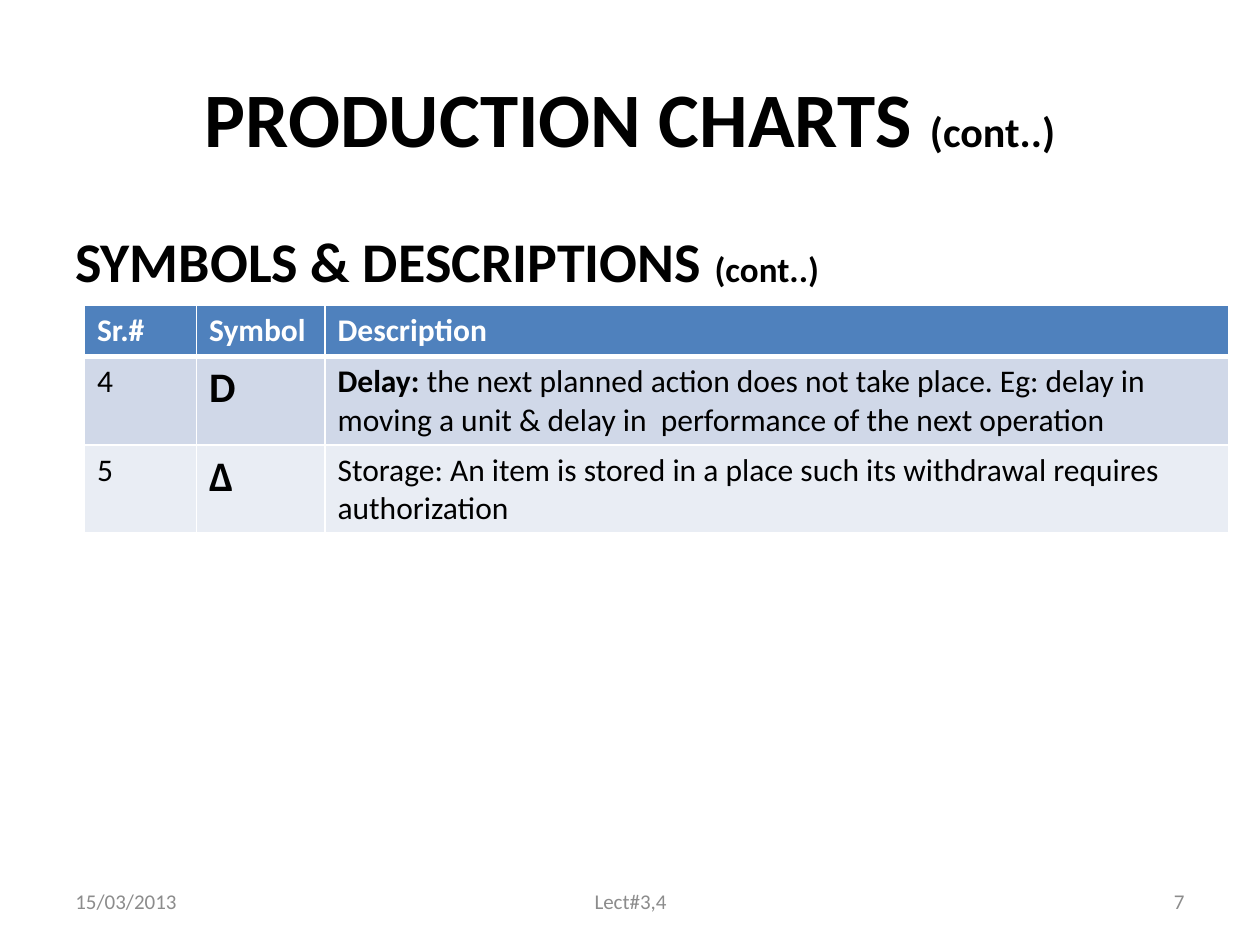
import pptx
import pptx.util
import pptx.dml.color
import pptx.enum.text
from lxml import etree

Inches, Pt = pptx.util.Inches, pptx.util.Pt
ALIGN, ANCHOR = pptx.enum.text.PP_ALIGN, pptx.enum.text.MSO_ANCHOR
A = "http://schemas.openxmlformats.org/drawingml/2006/main"

# Content: each run is (text, size, bold)
WIDTH, HEIGHT, MARGIN = 10, 7.5, 0.5
BLACK, GREY, WHITE = "000000", "8C8C8C", "FFFFFF"
TITLE = [("PRODUCTION CHARTS ", 44, True), ("(cont..)", 24, True)]
SUBTITLE = [("SYMBOLS & DESCRIPTIONS ", 32, True), ("(cont..)", 20, True)]
FOOTERS = [
    ("15/03/2013", MARGIN, 2.33, ALIGN.LEFT),
    ("Lect#3,4", 3.42, 3.17, ALIGN.CENTER),
    ("7", 7.17, 2.33, ALIGN.RIGHT),
]
COLUMNS = [0.89, 1.02, 7.17]
ROW_HEIGHTS = [0.41, 0.7, 0.7]
ROW_FILLS = ["4F81BD", "D0D8E8", "E9EDF4"]
ROWS = [
    [[("Sr.#", 18, True)], [("Symbol", 18, True)], [("Description", 18, True)]],
    [[("4", 18, False)], [("D", 24, True)],
     [("Delay:", 18, True),
      (" the next planned action does not take place. Eg: delay in moving a unit"
       " & delay in  performance of the next operation", 18, False)]],
    [[("5", 18, False)], [("∆", 24, True)],
     [("Storage: An item is stored in a place such its withdrawal requires"
       " authorization", 18, False)]],
]


def rgb(color):
    return pptx.dml.color.RGBColor.from_string(color)


def add_runs(p, runs, color):
    for text, size, bold in runs:
        r = p.add_run()
        r.text = text
        r.font.name, r.font.size, r.font.bold = "Calibri", Pt(size), bold
        r.font.color.rgb = rgb(color)


def add_text(s, box, runs, color=BLACK, align=ALIGN.LEFT, anchor=ANCHOR.MIDDLE):
    sp = s.shapes.add_textbox(*map(Inches, box))
    tf = sp.text_frame
    tf.word_wrap, tf.vertical_anchor = True, anchor
    p = tf.paragraphs[0]
    p.alignment = align
    add_runs(p, runs, color)


def set_borders(cell, widths):
    """Draw white borders; the lines must come before the cell's fill."""
    tc_pr = cell._tc.get_or_add_tcPr()
    for i, (side, width) in enumerate(widths.items()):
        ln = etree.Element(f"{{{A}}}ln{side}", w=str(Pt(width)))
        fill = etree.SubElement(ln, f"{{{A}}}solidFill")
        etree.SubElement(fill, f"{{{A}}}srgbClr", val=WHITE)
        tc_pr.insert(i, ln)


prs = pptx.Presentation()
prs.slide_width, prs.slide_height = Inches(WIDTH), Inches(HEIGHT)
s = prs.slides.add_slide(prs.slide_layouts[6])

# Headings
full = WIDTH - 2 * MARGIN
add_text(s, (MARGIN, 0.3, full, 1.25), TITLE, align=ALIGN.CENTER)
add_text(s, (MARGIN, 1.75, full, 4.95), SUBTITLE, anchor=ANCHOR.TOP)

# Footer
for text, left, width, align in FOOTERS:
    add_text(s, (left, 6.95, width, 0.4), [(text, 12, False)], GREY, align)

# Symbol table
table = s.shapes.add_table(
    len(ROWS), len(COLUMNS), Inches(0.67), Inches(2.42),
    Inches(sum(COLUMNS)), Inches(sum(ROW_HEIGHTS))).table
for column, width in zip(table.columns, COLUMNS):
    column.width = Inches(width)
for i, row in enumerate(ROWS):
    table.rows[i].height = Inches(ROW_HEIGHTS[i])
    for j, runs in enumerate(row):
        cell = table.cell(i, j)
        cell.fill.solid()
        cell.fill.fore_color.rgb = rgb(ROW_FILLS[i])
        set_borders(cell, {"L": 1, "R": 1, "T": 3 if i == 1 else 1,
                           "B": 3 if i == 0 else 1})
        add_runs(cell.text_frame.paragraphs[0], runs, BLACK if i else WHITE)

prs.save("out.pptx")
